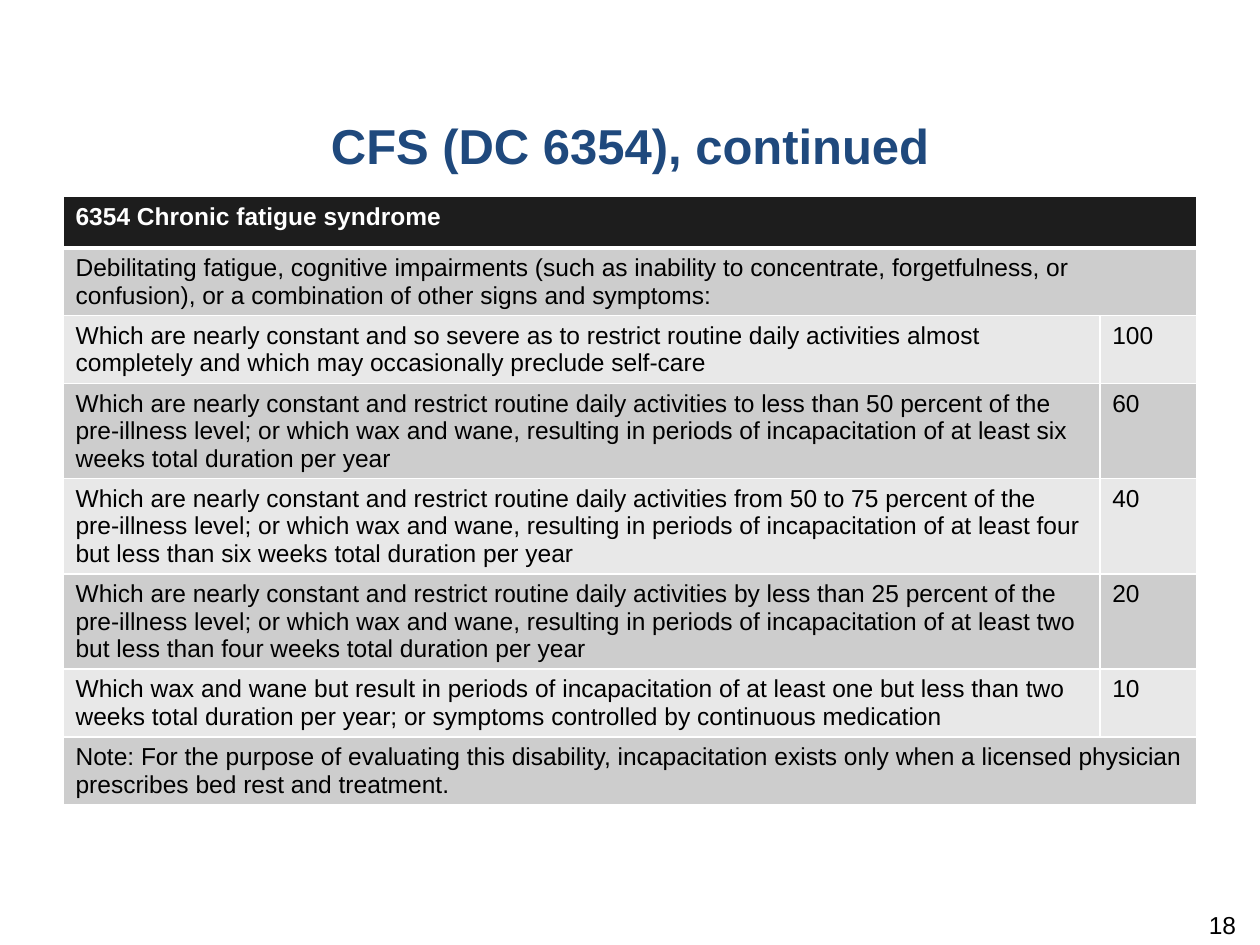
from dataclasses import dataclass

from lxml import etree
from pptx import Presentation
from pptx.dml.color import RGBColor
from pptx.enum.text import MSO_ANCHOR, PP_ALIGN
from pptx.oxml.ns import qn
from pptx.util import Cm, Pt

TOP = MSO_ANCHOR.TOP
LEFT, CENTER, RIGHT = PP_ALIGN.LEFT, PP_ALIGN.CENTER, PP_ALIGN.RIGHT


@dataclass(frozen=True)
class Theme:
    """Colours, font and type sizes of the slide."""
    font: str = "Arial"
    title: str = "1F497D"
    text: str = "000000"
    white: str = "FFFFFF"
    header: str = "1D1D1D"
    bands: tuple = ("CDCDCD", "E8E8E8")
    title_size: int = 28
    body_size: int = 14


THEME = Theme()
HEADING = "6354 Chronic fatigue syndrome"
RATINGS = [
    ("Debilitating fatigue, cognitive impairments (such as inability to concentrate, "
     "forgetfulness, or confusion), or a combination of other signs and symptoms:", None),
    ("Which are nearly constant and so severe as to restrict routine daily activities almost "
     "completely and which may occasionally preclude self-care", "100"),
    ("Which are nearly constant and restrict routine daily activities to less than 50 percent "
     "of the pre-illness level; or which wax and wane, resulting in periods of incapacitation "
     "of at least six weeks total duration per year", "60"),
    ("Which are nearly constant and restrict routine daily activities from 50 to 75 percent "
     "of the pre-illness level; or which wax and wane, resulting in periods of incapacitation "
     "of at least four but less than six weeks total duration per year", "40"),
    ("Which are nearly constant and restrict routine daily activities by less than 25 percent "
     "of the pre-illness level; or which wax and wane, resulting in periods of incapacitation "
     "of at least two but less than four weeks total duration per year", "20"),
    ("Which wax and wane but result in periods of incapacitation of at least one but less than "
     "two weeks total duration per year; or symptoms controlled by continuous medication", "10"),
    ("Note: For the purpose of evaluating this disability, incapacitation exists only when a "
     "licensed physician prescribes bed rest and treatment.", None),
]


def write(tf, text, size, color, bold=False, align=LEFT):
    """Write one formatted run into the first paragraph."""
    p = tf.paragraphs[0]
    p.alignment = align
    r = p.add_run()
    r.text = text
    r.font.name = THEME.font
    r.font.size = Pt(size)
    r.font.bold = bold
    r.font.color.rgb = RGBColor.from_string(color)


def style_cell(cell, fill, bottom=1):
    """Give a cell white borders and a solid fill."""
    tcPr = cell._tc.get_or_add_tcPr()
    for side, width in (("L", 1), ("R", 1), ("T", 1), ("B", bottom)):
        ln = etree.SubElement(tcPr, qn(f"a:ln{side}"), w=str(Pt(width)))
        solid = etree.SubElement(ln, qn("a:solidFill"))
        etree.SubElement(solid, qn("a:srgbClr"), val=THEME.white)
    cell.fill.solid()
    cell.fill.fore_color.rgb = RGBColor.from_string(fill)


def add_title(slide, text, x, y, w, h):
    """Place the title placeholder in the given box."""
    sp = slide.shapes.title
    sp.left, sp.top, sp.width, sp.height = x, y, w, h
    tf = sp.text_frame
    tf.word_wrap = True
    tf.vertical_anchor = TOP
    write(tf, text, THEME.title_size, THEME.title, True, CENTER)


def add_ratings(slide, x, y, w, row_h):
    """Build the ratings table, merging rows that have no percentage."""
    rows = [(HEADING, None)] + RATINGS
    table = slide.shapes.add_table(len(rows), 2, x, y, w, row_h * len(rows)).table
    rating_w = Cm(1.96)
    table.columns[0].width = w - rating_w
    table.columns[1].width = rating_w
    for i, (text, rating) in enumerate(rows):
        head = i == 0
        fill = THEME.header if head else THEME.bands[(i - 1) % 2]
        for j, value in enumerate((text, rating)):
            cell = table.cell(i, j)
            style_cell(cell, fill, 3 if head else 1)
            if value:
                color = THEME.white if head else THEME.text
                write(cell.text_frame, value, THEME.body_size, color, head)
        if rating is None:
            table.cell(i, 0).merge(table.cell(i, 1))


def add_page_number(slide, text, x, y, w, h):
    """Place the right-aligned page number."""
    tf = slide.shapes.add_textbox(x, y, w, h).text_frame
    tf.word_wrap = True
    tf.vertical_anchor = TOP
    tf.margin_top = 0
    write(tf, text, THEME.body_size, THEME.text, align=RIGHT)
    tf.paragraphs[0].space_after = Pt(6)


def main():
    """Build and save the slide."""
    prs = Presentation()
    prs.slide_width, prs.slide_height = Cm(25.4), Cm(19.05)
    slide = prs.slides.add_slide(prs.slide_layouts[5])
    add_title(slide, "CFS (DC 6354), continued", 0, Cm(2.21), prs.slide_width, Cm(3.02))
    add_ratings(slide, Cm(1.27), Cm(3.96), Cm(22.86), Cm(1.04))
    add_page_number(slide, "18", Cm(19.25), Cm(18.34), Cm(5.92), Cm(1.02))
    prs.save("out.pptx")


if __name__ == "__main__":
    main()
